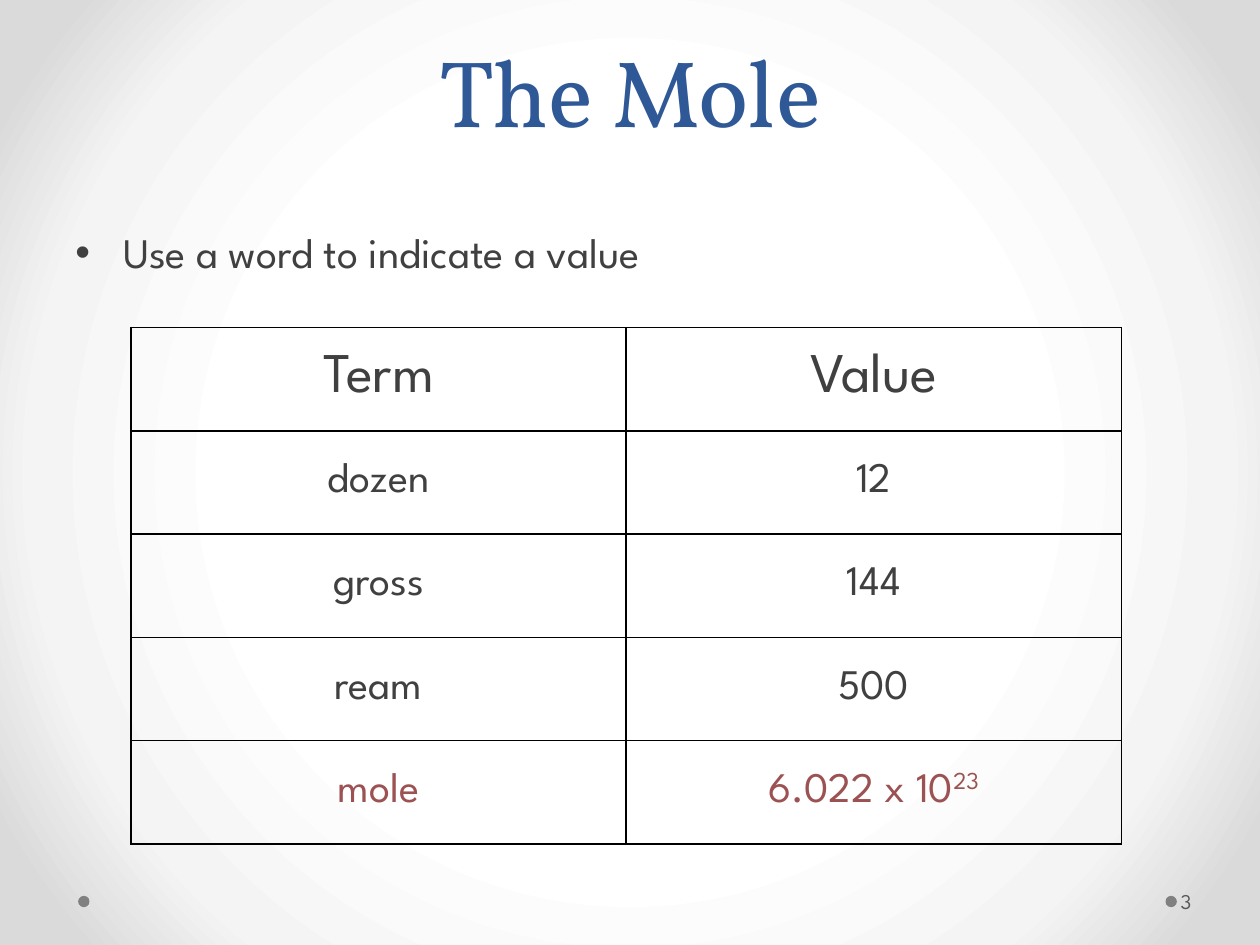
from lxml.etree import SubElement
from pptx import Presentation
from pptx.dml.color import RGBColor
from pptx.enum.shapes import MSO_SHAPE
from pptx.enum.text import MSO_ANCHOR, PP_ALIGN
from pptx.oxml import parse_xml
from pptx.oxml.ns import nsdecls, qn
from pptx.util import Inches, Pt

SANS, DARK, RED = "League Spartan", "404040", "9C5252"


def rgb(value):
    return RGBColor.from_string(value)


def add_run(p, text, size, color, name=SANS):
    r = p.add_run()
    r.text = text
    for key, value in {"size": Pt(size), "name": name, "bold": False}.items():
        setattr(r.font, key, value)
    r.font.color.rgb = rgb(color)
    return r


prs = Presentation()
prs.slide_width, prs.slide_height = Inches(10), Inches(7.5)
s = prs.slides.add_slide(prs.slide_layouts[5])

# Background: radial gradient, white in the centre
stops = "".join(
    f'<a:gs pos="{pos * 1000}"><a:srgbClr val="{color}"/></a:gs>'
    for pos, color in [(50, "FFFFFF"), (76, "F4F4F4"), (92, "DADADA")]
)
s.background.fill.solid()
bg_pr = s.element.cSld.find(qn("p:bg")).find(qn("p:bgPr"))
bg_pr.replace(bg_pr[0], parse_xml(
    f'<a:gradFill {nsdecls("a")} rotWithShape="1"><a:gsLst>{stops}</a:gsLst>'
    '<a:path path="circle"><a:fillToRect l="50000" t="50000" r="50000" b="50000"/></a:path>'
    '</a:gradFill>'
))

# Footer dots
for left in (9.25, 0.62):
    dot = s.shapes.add_shape(MSO_SHAPE.OVAL, Inches(left), Inches(7.11), Inches(0.09), Inches(0.09))
    dot.shadow.inherit = False
    dot.fill.solid()
    dot.fill.fore_color.rgb = rgb("808080")
    dot.line.fill.background()

# Title
title = s.shapes.title
title.left, title.top, title.width, title.height = Inches(0.5), Inches(0), Inches(9), Inches(1.21)
title.text_frame.vertical_anchor = MSO_ANCHOR.BOTTOM
p = title.text_frame.paragraphs[0]
p.alignment, p.line_spacing = PP_ALIGN.CENTER, Pt(58)
add_run(p, "The Mole", 54, "2F5897", "Vollkorn")

# Bullet
tf = s.shapes.add_textbox(Inches(0.5), Inches(1.75), Inches(9), Inches(0.7)).text_frame
tf.word_wrap = True
p = tf.paragraphs[0]
p.space_before = Pt(5)
add_run(p, "Use a word to indicate a value", 24, DARK)
pPr = p._p.get_or_add_pPr()
pPr.set("marL", str(Inches(0.38)))
pPr.set("indent", str(-Inches(0.38)))
SubElement(pPr, qn("a:buFont"), typeface="Arial")
SubElement(pPr, qn("a:buChar"), char="•")

# Table of terms: term, value, exponent, size, colour
rows = [
    ("Term", "Value", "", 32, DARK),
    ("dozen", "12", "", 24, DARK),
    ("gross", "144", "", 24, DARK),
    ("ream", "500", "", 24, DARK),
    ("mole", "6.022 x 10", "23", 24, RED),
]
table = s.shapes.add_table(
    len(rows), 2, Inches(1.04), Inches(2.6), Inches(7.86), Inches(0.82 * len(rows))
).table
table.first_row = table.horz_banding = False
for i, (term, value, exponent, size, color) in enumerate(rows):
    for j, text in enumerate((term, value)):
        cell = table.cell(i, j)
        cell.vertical_anchor = MSO_ANCHOR.MIDDLE
        p = cell.text_frame.paragraphs[0]
        p.alignment = PP_ALIGN.CENTER
        add_run(p, text, size, color)
        if j == 1 and exponent:
            r = add_run(p, exponent, size, color)
            r._r.get_or_add_rPr().set("baseline", "30000")
        # Borders come before the fill in the cell properties
        tcPr = cell._tc.get_or_add_tcPr()
        for side in ("lnL", "lnR", "lnT", "lnB"):
            ln = SubElement(tcPr, qn(f"a:{side}"), w=str(Pt(1)))
            SubElement(SubElement(ln, qn("a:solidFill")), qn("a:srgbClr"), val="000000")
        cell.fill.background()

# Slide number
tf = s.shapes.add_textbox(Inches(9.34), Inches(6.95), Inches(0.61), Inches(0.4)).text_frame
frame = {
    "word_wrap": True,
    "vertical_anchor": MSO_ANCHOR.MIDDLE,
    "margin_left": Inches(0.03),
    "margin_right": Inches(0.05),
}
for key, value in frame.items():
    setattr(tf, key, value)
add_run(tf.paragraphs[0], "3", 12, "595959")

prs.save("out.pptx")
